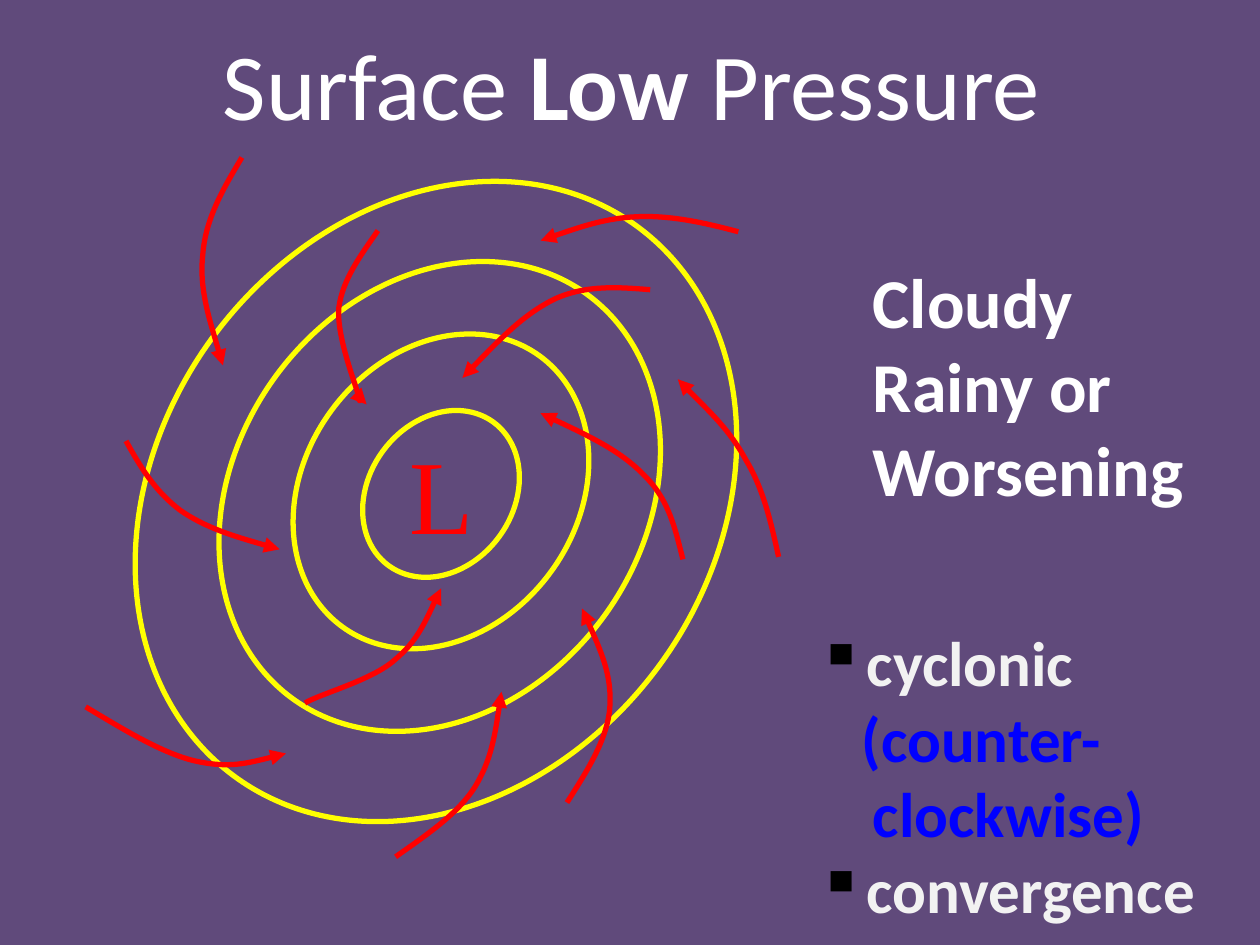
from dataclasses import dataclass

from lxml import etree
from pptx import Presentation
from pptx.dml.color import RGBColor
from pptx.enum.shapes import MSO_SHAPE
from pptx.enum.text import MSO_AUTO_SIZE
from pptx.oxml.ns import qn
from pptx.util import Inches, Pt

RECT, OVAL = MSO_SHAPE.RECTANGLE, MSO_SHAPE.OVAL
GROW = MSO_AUTO_SIZE.SHAPE_TO_FIT_TEXT
COLS, ROWS = 100, 75
CELL = Inches(10) // COLS
ISOBAR_RATIO, ISOBAR_TILT = 0.813, 36.1


@dataclass(frozen=True)
class Theme:
    """Colours, fonts and sizes of the slide."""
    back: str = "604A7B"
    light: str = "FFFFFF"
    soft: str = "F2F2F2"
    dark: str = "000000"
    isobar: str = "FFFF00"
    wind: str = "FF0000"
    turn: str = "0000FF"
    font: str = "Calibri"
    serif: str = "Times New Roman"
    title: int = 54
    centre: int = 60
    weather: int = 40
    flow: int = 36
    stroke: int = 3


T = Theme()

ISOBARS = [(34.6, 39.8, 54.1), (34.9, 39.4, 39.7), (35, 39, 26.6), (35, 39.2, 14.1)]

WINDS = [
    [(29.1, 32.1), (28.9, 32.3), (28.7, 32.5), (28.4, 31.2), (28, 29.9), (26.7, 26.5), (26.9, 24.4),
     (27.2, 22.2), (28.6, 20.3), (30, 18.3)],
    [(22.7, 59.8), (20.4, 60.4), (18.2, 61), (15.5, 60.4), (12.9, 59.8), (9.8, 57.9), (6.8, 56.1)],
    [(35, 46.7), (34, 48.8), (33.1, 50.9), (31.3, 52.4), (29.5, 54), (25.3, 55.1), (24.2, 55.8)],
    [(42.9, 19.1), (45.5, 18.2), (48.1, 17.3), (50.7, 17.2), (53.3, 17.1), (56, 17.7), (58.6, 18.4)],
    [(22.2, 43.6), (19.3, 42.8), (16.3, 41.9), (14.3, 40.5), (12.3, 39), (11.1, 37), (10, 35)],
    [(17.7, 29), (16.8, 25.9), (15.8, 22.9), (16.1, 20.2), (16.3, 17.4), (17.7, 15), (19.2, 12.5)],
    [(46.2, 48.3), (47.4, 51), (48.6, 53.6), (48.4, 56.2), (48.2, 58.7), (46.6, 61.2), (45, 63.7)],
    [(36.7, 30), (39.2, 27.4), (41.6, 24.9), (44.1, 23.7), (46.6, 22.6), (49.1, 22.8), (51.6, 23)],
    [(39.8, 54.9), (39.4, 57.6), (39, 60.4), (37.6, 62.6), (36.2, 64.7), (33.8, 66.3), (31.4, 68)],
    [(42.9, 32.8), (46.1, 34.3), (49.3, 35.8), (51.2, 37.8), (53.1, 39.7), (53.6, 42), (54.2, 44.4)],
    [(53.8, 30.1), (55.8, 32.2), (57.9, 34.1), (59.2, 36.5), (60.6, 38.8), (61.2, 41.5), (61.8, 44.2)],
]


def grid(*cells):
    """Turn columns and rows into lengths."""
    return [round(c * CELL) for c in cells]


def rgb(hex_colour):
    """Return a colour object."""
    return RGBColor.from_string(hex_colour)


def add_backdrop(s):
    """Fill the slide with one plain rectangle."""
    sp = s.shapes.add_shape(RECT, *grid(0, 0, COLS, ROWS))
    sp.shadow.inherit = False
    sp.fill.solid()
    sp.fill.fore_color.rgb = rgb(T.back)
    sp.line.color.rgb = rgb(T.back)
    sp.line.width = Pt(0.75)


def style_outline(sp, colour):
    """Leave a shape unfilled with a coloured outline."""
    sp.shadow.inherit = False
    sp.fill.background()
    sp.line.color.rgb = rgb(colour)
    sp.line.width = Pt(T.stroke)


def add_isobar(s, cx, cy, height):
    """Draw one tilted oval around its centre."""
    width = height * ISOBAR_RATIO
    sp = s.shapes.add_shape(OVAL, *grid(cx - width / 2, cy - height / 2, width, height))
    sp.rotation = ISOBAR_TILT
    style_outline(sp, T.isobar)


def add_wind(s, points):
    """Draw a Bezier curve whose arrowhead is at its first point."""
    start, *controls = [grid(*pt) for pt in points]
    builder = s.shapes.build_freeform(*start, scale=1.0)
    sp = builder.add_line_segments(controls, close=False).convert_to_shape()
    style_outline(sp, T.wind)
    outline = next(sp._element.iter(qn("a:path")))
    lines = outline.findall(qn("a:lnTo"))
    for i in range(0, len(lines), 3):
        curve = etree.SubElement(outline, qn("a:cubicBezTo"))
        for line in lines[i:i + 3]:
            curve.append(line[0])
            outline.remove(line)
    etree.SubElement(sp.line._get_or_add_ln(), qn("a:headEnd"), type="triangle")


def add_text(s, box, paragraphs, size, font=T.font):
    """Add a text box of paragraphs, each a list of (text, colour, bold) runs."""
    tf = s.shapes.add_textbox(*grid(*box)).text_frame
    tf.word_wrap = True
    tf.auto_size = GROW
    for i, runs in enumerate(paragraphs):
        p = tf.paragraphs[0] if i == 0 else tf.add_paragraph()
        for text, colour, bold in runs:
            r = p.add_run()
            r.text = text
            r.font.name, r.font.size, r.font.bold = font, Pt(size), bold
            r.font.color.rgb = rgb(colour)
    return tf


def indent(p, margin, bullet=None):
    """Set a paragraph's left margin and an optional hanging bullet."""
    pPr = p._p.get_or_add_pPr()
    pPr.set("marL", str(grid(margin)[0]))
    if bullet:
        pPr.set("indent", str(-grid(margin)[0]))
        colour = etree.SubElement(pPr, qn("a:buClr"))
        etree.SubElement(colour, qn("a:srgbClr"), val=T.dark)
        etree.SubElement(pPr, qn("a:buChar"), char=bullet)


def add_flow_list(s):
    """Add the list that describes the air flow."""
    rows = [("cyclonic", T.soft, 3.9, "▪"), ("(counter-", T.turn, 3.5, None),
            ("clockwise)", T.turn, 4.4, None), ("convergence", T.soft, 3.9, "▪")]
    tf = add_text(s, (63.9, 49, 33, 25.2), [[(text, colour, True)] for text, colour, *_ in rows], T.flow)
    for p, (_, _, margin, bullet) in zip(tf.paragraphs, rows):
        indent(p, margin, bullet)


def main():
    """Build and save the slide."""
    prs = Presentation()
    prs.slide_width, prs.slide_height = grid(COLS, ROWS)
    s = prs.slides.add_slide(prs.slide_layouts[6])
    add_backdrop(s)
    add_text(s, (68.3, 20, 28.5, 21.2),
             [[(text, T.light, True)] for text in ("Cloudy", "Rainy or", "Worsening")], T.weather)
    add_text(s, (16.7, 1.6, 72.5, 10.1),
             [[("Surface ", T.light, False), ("Low", T.light, True), (" Pressure", T.light, False)]], T.title)
    for isobar in ISOBARS:
        add_isobar(s, *isobar)
    for wind in WINDS:
        add_wind(s, wind)
    add_text(s, (31.5, 33.6, 7.1, 11), [[("L", T.wind, False)]], T.centre, T.serif)
    add_flow_list(s)
    prs.save("out.pptx")


if __name__ == "__main__":
    main()
